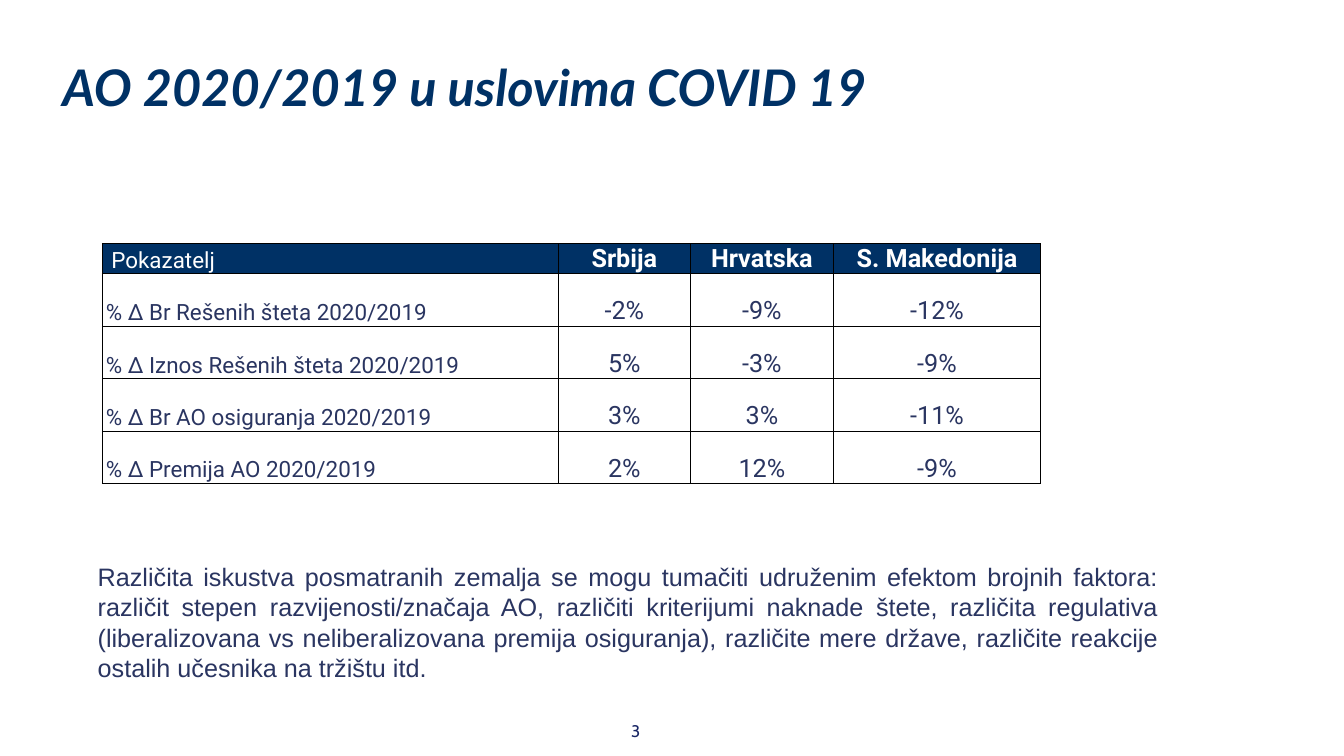
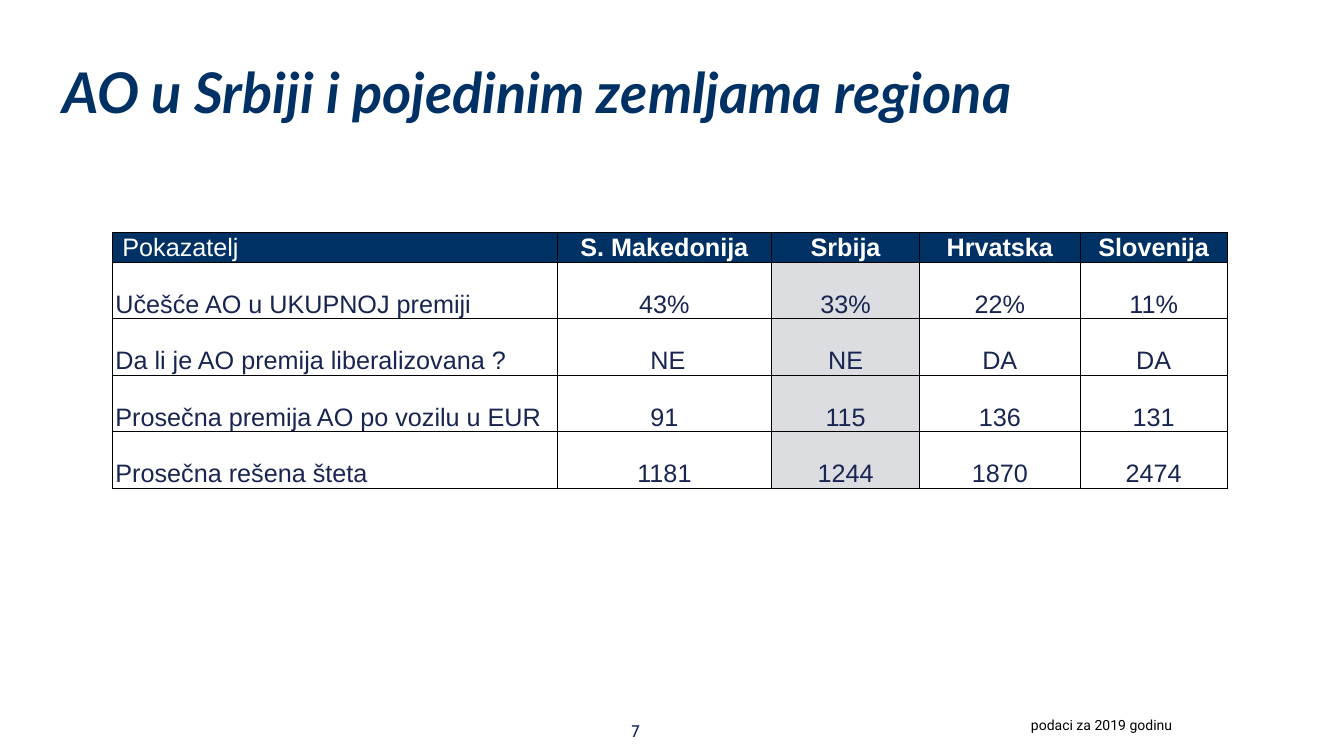
from lxml import etree
from pptx import Presentation
from pptx import util as u
from pptx.dml.color import RGBColor
from pptx.enum import text
from pptx.oxml import ns

PX = 9144
NAVY = RGBColor(0x00, 0x31, 0x65)
SLATE = RGBColor(0x2A, 0x35, 0x61)
INDIGO = RGBColor(0x18, 0x25, 0x51)
NUMBER_BLUE = RGBColor(0x18, 0x25, 0x65)
HIGHLIGHT = RGBColor(0xDC, 0xDD, 0xE0)
WHITE = RGBColor(0xFF, 0xFF, 0xFF)
BLACK = RGBColor(0x00, 0x00, 0x00)
TITLE_ONLY = 5
ALIGN = text.PP_ALIGN

CHANGES = [
    [" Pokazatelj", "Srbija", "Hrvatska", "S. Makedonija"],
    ["% ∆ Br Rešenih šteta 2020/2019", "-2%", "-9%", "-12%"],
    ["% ∆ Iznos Rešenih šteta 2020/2019", "5%", "-3%", "-9%"],
    ["% ∆ Br AO osiguranja 2020/2019", "3%", "3%", "-11%"],
    ["% ∆ Premija AO 2020/2019", "2%", "12%", "-9%"],
]
REGION = [
    [" Pokazatelj", "S. Makedonija", "Srbija", "Hrvatska", "Slovenija"],
    ["Učešće AO u UKUPNOJ premiji", "43%", "33%", "22%", "11%"],
    ["Da li je AO premija liberalizovana ?", " NE", "NE", "DA", "DA"],
    ["Prosečna premija AO po vozilu u EUR", "91", "115", "136", "131"],
    ["Prosečna rešena šteta", "1181", "1244", "1870", "2474"],
]
EXPLANATION = (
    "Različita iskustva posmatranih zemalja se mogu tumačiti udruženim efektom "
    "brojnih faktora: različit stepen razvijenosti/značaja AO, različiti kriterijumi "
    "naknade štete, različita regulativa (liberalizovana vs neliberalizovana premija "
    "osiguranja), različite mere države, različite reakcije ostalih učesnika na "
    "tržištu itd."
)


def px(length):
    """Turn px into EMU."""
    return u.Emu(length * PX)


def write(frame, words, size, font, color, align=ALIGN.LEFT, bold=False, italic=False):
    """Put one formatted run in the first paragraph and return the paragraph."""
    paragraph = frame.paragraphs[0]
    paragraph.alignment = align
    run = paragraph.add_run()
    run.text = words
    run.font.size = u.Pt(size)
    run.font.name = font
    run.font.color.rgb = color
    run.font.bold = bold
    run.font.italic = italic
    return paragraph


def set_margins(frame, horizontal, vertical):
    """Set the four insets of a text frame or table cell."""
    frame.margin_left = frame.margin_right = px(horizontal)
    frame.margin_top = frame.margin_bottom = px(vertical)


def add_text(slide, box, words, size, font, color, align, margins=(6, 6),
             anchor=text.MSO_ANCHOR.TOP, wrap=True):
    """Add a text box with one paragraph."""
    frame = slide.shapes.add_textbox(*map(px, box)).text_frame
    frame.word_wrap = wrap
    frame.vertical_anchor = anchor
    set_margins(frame, *margins)
    write(frame, words, size, font, color, align)


def add_slide(presentation, title, title_size, title_height, number):
    """Add a slide with its title and page number."""
    slide = presentation.slides.add_slide(presentation.slide_layouts[TITLE_ONLY])
    shape = slide.shapes.title
    shape.left, shape.top, shape.width, shape.height = map(px, (118, 82, 2428, title_height))
    frame = shape.text_frame
    frame.auto_size = text.MSO_AUTO_SIZE.NONE
    frame.vertical_anchor = text.MSO_ANCHOR.TOP
    set_margins(frame, 6, 6)
    paragraph = write(frame, title, title_size, "Lato", NAVY, bold=True, italic=True)
    paragraph.line_spacing = 1.2
    add_text(slide, (1236, 1423, 51, 52), number, 24, "Cabin", NUMBER_BLUE,
             ALIGN.CENTER, wrap=False)
    return slide


def add_borders(cell):
    """Draw a thin black line on every side of a cell."""
    properties = cell._tc.get_or_add_tcPr()
    for side in ("lnL", "lnR", "lnT", "lnB"):
        line = etree.SubElement(properties, ns.qn(f"a:{side}"), w=str(u.Pt(1)))
        fill = etree.SubElement(line, ns.qn("a:solidFill"))
        etree.SubElement(fill, ns.qn("a:srgbClr"), val=str(BLACK))


def add_grid(slide, origin, columns, header_height, row_height, rows, font, color,
             label_size, highlight=None):
    """Add a bordered table with a navy header and an optional shaded column."""
    heights = [header_height] + [row_height] * (len(rows) - 1)
    box = (*origin, sum(columns), sum(heights))
    table = slide.shapes.add_table(len(rows), len(columns), *map(px, box)).table
    table.first_row = table.horz_banding = False
    for column, width in zip(table.columns, columns):
        column.width = px(width)
    for row, height in zip(table.rows, heights):
        row.height = px(height)
    for r, row in enumerate(rows):
        for c, words in enumerate(row):
            cell = table.cell(r, c)
            header, label = r == 0, c == 0
            set_margins(cell, 7, 0)
            cell.vertical_anchor = text.MSO_ANCHOR.BOTTOM
            add_borders(cell)
            if header or c == highlight:
                cell.fill.solid()
                cell.fill.fore_color.rgb = NAVY if header else HIGHLIGHT
            else:
                cell.fill.background()
            write(cell.text_frame, words, label_size if label else 36, font,
                  WHITE if header else color,
                  ALIGN.LEFT if label else ALIGN.CENTER, bold=header and not label)


def add_changes_slide(presentation):
    """Build the slide on changes from 2019 to 2020."""
    slide = add_slide(presentation, "AO 2020/2019 u uslovima COVID 19", 72, 143, "3")
    add_grid(slide, (203, 483), (905, 262, 284, 411), 59, 104, CHANGES,
             "Roboto", SLATE, 32)
    add_text(slide, (184, 1109, 2124, 252), EXPLANATION, 36, "Arial", SLATE,
             ALIGN.JUSTIFY, margins=(10, 5))


def add_region_slide(presentation):
    """Build the slide comparing the countries of the region."""
    slide = add_slide(presentation, "AO u Srbiji i pojedinim zemljama regiona", 80, 173, "7")
    add_grid(slide, (222, 460), (884, 425, 294, 318, 293), 56, 112, REGION,
             "Arial", INDIGO, 36, highlight=2)
    add_text(slide, (1722, 1416, 928, 45), "podaci za 2019 godinu", 20, "Roboto",
             BLACK, ALIGN.CENTER, anchor=text.MSO_ANCHOR.MIDDLE)


def main():
    """Build and save the presentation."""
    presentation = Presentation()
    presentation.slide_width, presentation.slide_height = px(2667), px(1500)
    add_changes_slide(presentation)
    add_region_slide(presentation)
    presentation.save("out.pptx")


if __name__ == "__main__":
    main()
